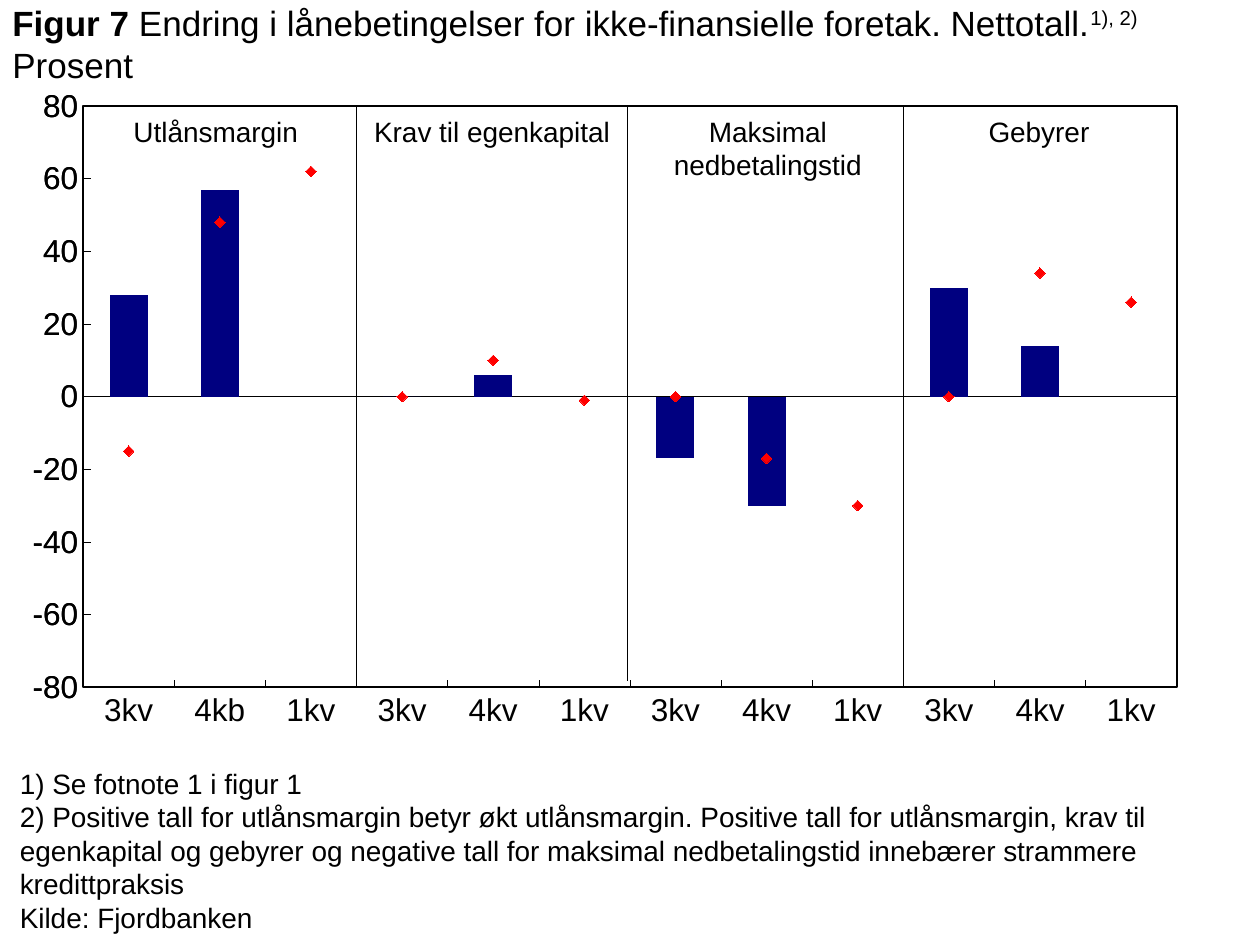
from copy import deepcopy

from lxml.etree import SubElement
from pptx import Presentation
from pptx.chart.axis import CategoryAxis, ValueAxis
from pptx.chart.data import CategoryChartData
from pptx.dml.color import RGBColor
from pptx.enum.chart import (XL_AXIS_CROSSES, XL_CHART_TYPE, XL_MARKER_STYLE,
                             XL_TICK_LABEL_POSITION, XL_TICK_MARK)
from pptx.enum.shapes import MSO_CONNECTOR
from pptx.enum.text import MSO_ANCHOR, PP_ALIGN
from pptx.oxml import parse_xml
from pptx.oxml.ns import nsdecls, qn
from pptx.util import Cm, Pt

COLORS = {"ink": "000000", "bar": "000080", "marker": "FF0000"}
FONT = "Arial"

QUARTERS = ["3kv", "4kb", "1kv"] + ["3kv", "4kv", "1kv"] * 3
# Heading, left and width of heading (cm), reported change, expected change
PANELS = [
    ("Utlånsmargin", 1.57, 5.56, [28, 57, None], [-15, 48, 62]),
    ("Krav til egenkapital", 7.14, 5.56, [0, 6, None], [0, 10, -1]),
    ("Maksimal nedbetalingstid", 12.7, 5.56, [-17, -30, None], [0, -17, -30]),
    ("Gebyrer", 18.06, 5.77, [30, 14, None], [0, 34, 26]),
]
DIVIDERS = [7.19, 12.65, 18.21]
TITLE = [("Figur 7", True, 0),
         (" Endring i lånebetingelser for ikke-finansielle foretak. Nettotall.", False, 0),
         ("1), 2)", False, 30000),
         (" Prosent", False, 0)]
FOOTNOTES = [
    "1) Se fotnote 1 i figur 1",
    "2) Positive tall for utlånsmargin betyr økt utlånsmargin. Positive tall for utlånsmargin, krav til",
    "egenkapital og gebyrer og negative tall for maksimal nedbetalingstid innebærer strammere",
    "kredittpraksis",
    "Kilde: Fjordbanken",
]


def color(name):
    return RGBColor.from_string(COLORS[name])


def style_font(font, size):
    font.name = FONT
    font.size = Pt(size)
    font.color.rgb = color("ink")


def style_line(line, width):
    line.color.rgb = color("ink")
    line.width = Pt(width)


def add_text_frame(slide, left, top, width, height):
    frame = slide.shapes.add_textbox(Cm(left), Cm(top), Cm(width), Cm(height)).text_frame
    frame.word_wrap = True
    return frame


def add_title(slide):
    frame = add_text_frame(slide, 0, 0, 23.83, 1.75)
    frame.vertical_anchor = MSO_ANCHOR.MIDDLE
    for words, bold, baseline in TITLE:
        run = frame.paragraphs[0].add_run()
        run.text = words
        style_font(run.font, 20)
        run.font.bold = bold
        if baseline:
            run.font._element.set("baseline", str(baseline))


def add_text(slide, words, box, alignment=PP_ALIGN.LEFT):
    frame = add_text_frame(slide, *box)
    frame.text = words
    for paragraph in frame.paragraphs:
        paragraph.alignment = alignment
        style_font(paragraph.runs[0].font, 16)


def add_divider(slide, x):
    divider = slide.shapes.add_connector(
        MSO_CONNECTOR.STRAIGHT, Cm(x), Cm(13.72), Cm(x), Cm(2.13))
    style_line(divider.line, 0.75)
    SubElement(divider._element.spPr, qn("a:effectLst"))


def panel_data():
    data = CategoryChartData()
    data.categories = QUARTERS
    for kind, label in ((3, "rapportert"), (4, "forventet")):
        for index, panel in enumerate(PANELS):
            before = [None] * (3 * index)
            after = [None] * (9 - 3 * index)
            data.add_series(f"{panel[0]}, {label}", before + panel[kind] + after)
    return data


def style_axes(chart):
    zero_line, scale = chart.category_axis, chart.value_axis
    zero_line.major_tick_mark = XL_TICK_MARK.NONE
    zero_line.tick_label_position = XL_TICK_LABEL_POSITION.NONE
    scale.minimum_scale, scale.maximum_scale, scale.major_unit = -80, 80, 20
    scale.major_tick_mark = XL_TICK_MARK.INSIDE
    scale.has_major_gridlines = False
    for axis in (zero_line, scale):
        style_line(axis.format.line, 0.25)
        style_font(axis.tick_labels.font, 18)


def move_to_right_axis(chart):
    """Turn the expected changes into a line plot with axes at the bottom and right."""
    plot_area = chart._chartSpace.chart.plotArea
    bars = plot_area.find(qn("c:barChart"))
    lines = parse_xml(
        f'<c:lineChart {nsdecls("c")}><c:grouping val="standard"/>'
        '<c:varyColors val="0"/><c:marker val="1"/>'
        '<c:axId val="301"/><c:axId val="302"/></c:lineChart>')
    bars.addnext(lines)
    for series in bars.findall(qn("c:ser"))[len(PANELS):]:
        for bar_setting in series.findall(qn("c:invertIfNegative")):
            series.remove(bar_setting)
        lines.find(qn("c:marker")).addprevious(series)

    left_scale = plot_area.find(qn("c:valAx"))
    quarters = deepcopy(plot_area.find(qn("c:catAx")))
    right_scale = deepcopy(left_scale)
    left_scale.addnext(quarters)
    quarters.addnext(right_scale)
    for axis, own, other in ((quarters, "301", "302"), (right_scale, "302", "301")):
        axis.find(qn("c:axId")).set("val", own)
        axis.find(qn("c:crossAx")).set("val", other)
    for position in right_scale.findall(qn("c:axPos")):
        position.set("val", "r")

    quarter_axis = CategoryAxis(quarters)
    quarter_axis.major_tick_mark = XL_TICK_MARK.INSIDE
    quarter_axis.tick_label_position = XL_TICK_LABEL_POSITION.NEXT_TO_AXIS
    quarter_axis.crosses = XL_AXIS_CROSSES.MAXIMUM
    ValueAxis(right_scale).crosses = XL_AXIS_CROSSES.MINIMUM


def frame_plot_area(chart):
    plot_area = chart._chartSpace.chart.plotArea
    for old in plot_area.findall(qn("c:layout")):
        plot_area.remove(old)
    places = "".join(f'<c:{tag} val="{value}"/>' for tag, value in (
        ("layoutTarget", "inner"), ("xMode", "edge"), ("yMode", "edge"),
        ("x", 0.066), ("y", 0.026), ("w", 0.868), ("h", 0.866)))
    plot_area.insert(0, parse_xml(
        f'<c:layout {nsdecls("c")}><c:manualLayout>{places}</c:manualLayout></c:layout>'))
    plot_area.append(parse_xml(
        f'<c:spPr {nsdecls("c", "a")}><a:noFill/><a:ln w="{Pt(1.25)}"><a:solidFill>'
        f'<a:srgbClr val="{COLORS["ink"]}"/></a:solidFill></a:ln></c:spPr>'))


def add_panel_chart(slide):
    chart = slide.shapes.add_chart(
        XL_CHART_TYPE.COLUMN_CLUSTERED, Cm(0), Cm(1.78), Cm(25.4), Cm(13.54),
        panel_data()).chart
    chart.has_legend = False
    chart.has_title = False
    style_font(chart.font, 18)
    style_axes(chart)
    move_to_right_axis(chart)
    frame_plot_area(chart)

    reported, expected = chart.plots
    reported.gap_width, reported.overlap = 140, 100
    reported.vary_by_categories = False
    for series in reported.series:
        series.format.fill.solid()
        series.format.fill.fore_color.rgb = color("bar")
        series.invert_if_negative = False
    for series in expected.series:
        series.smooth = False
        series.format.line.fill.background()
        series.marker.style = XL_MARKER_STYLE.DIAMOND
        series.marker.size = 6
        series.marker.format.fill.solid()
        series.marker.format.fill.fore_color.rgb = color("marker")
        series.marker.format.line.color.rgb = color("marker")


def main():
    presentation = Presentation()
    presentation.slide_width, presentation.slide_height = Cm(25.4), Cm(19.05)
    slide = presentation.slides.add_slide(presentation.slide_layouts[6])
    add_panel_chart(slide)
    for heading, left, width, *_ in PANELS:
        add_text(slide, heading, (left, 2.18, width, 0.94), PP_ALIGN.CENTER)
    for x in DIVIDERS:
        add_divider(slide, x)
    add_text(slide, "\n".join(FOOTNOTES), (0.15, 15.32, 25.25, 3.53))
    add_title(slide)
    presentation.save("out.pptx")


if __name__ == "__main__":
    main()
